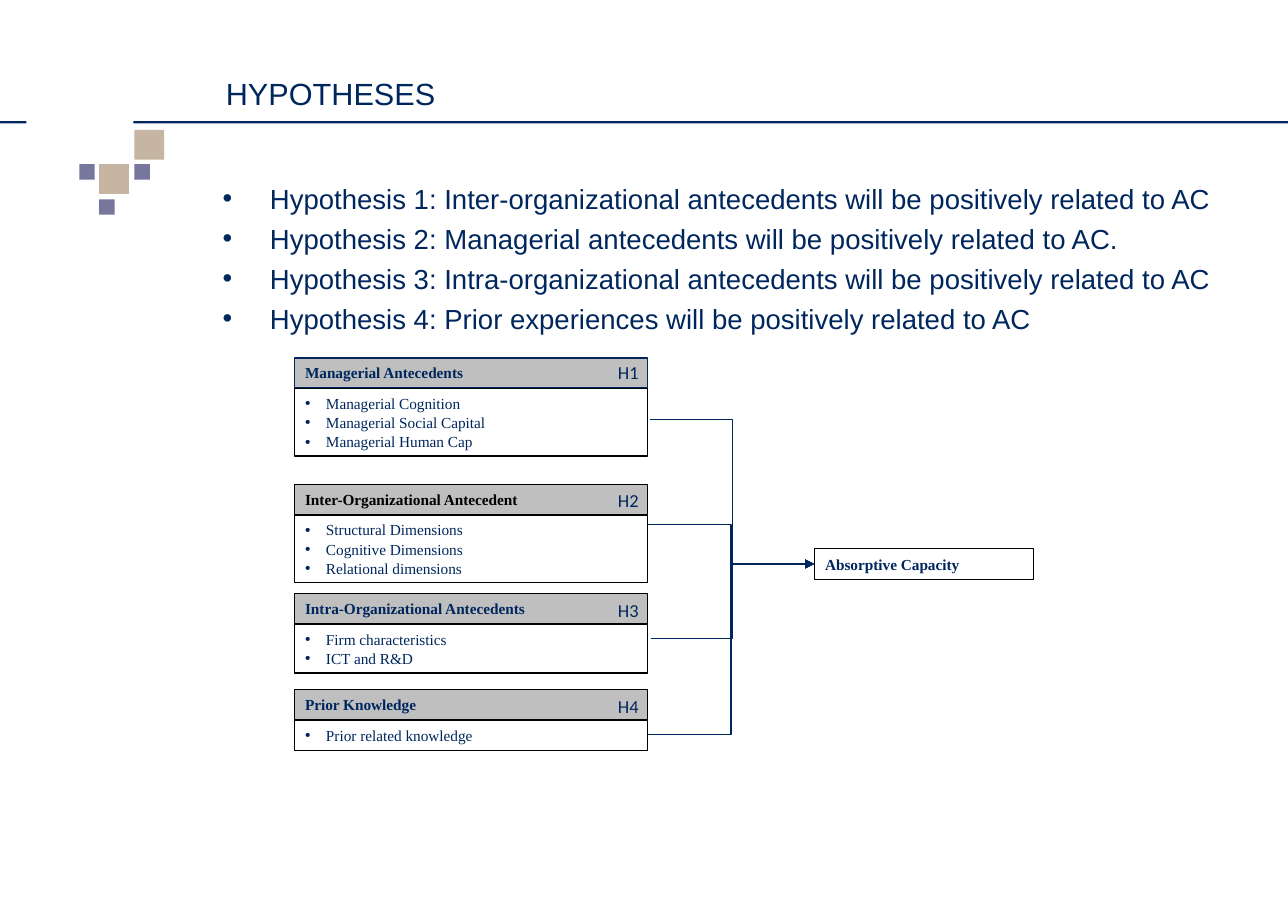
from lxml.etree import SubElement
from pptx import Presentation
from pptx.dml.color import RGBColor
from pptx.enum.shapes import MSO_CONNECTOR, MSO_SHAPE
from pptx.enum.text import MSO_ANCHOR, MSO_AUTO_SIZE, PP_ALIGN
from pptx.oxml.ns import qn
from pptx.util import Inches, Pt

COLORS = {
    "navy": "00275D",
    "black": "000000",
    "gray": "BFBFBF",
    "violet": "77769D",
    "sand": "C5B5A2",
}

HYPOTHESES = [
    "Hypothesis 1: Inter-organizational antecedents will be positively related to AC",
    "Hypothesis 2: Managerial antecedents will be positively related to AC.",
    "Hypothesis 3: Intra-organizational antecedents will be positively related to AC",
    "Hypothesis 4: Prior experiences will be positively related to AC",
]

ANTECEDENTS = [
    dict(top=3.25, heading="Managerial Antecedents", label="H1", label_drop=-0.02,
         border="navy", start=(5.9, 3.81),
         items=["Managerial Cognition", "Managerial Social Capital", "Managerial Human Cap"]),
    dict(top=4.4, heading="Inter-Organizational Antecedent", label="H2", label_drop=-0.01,
         heading_color="black", start=(5.88, 4.76),
         items=["Structural Dimensions", "Cognitive Dimensions", "Relational dimensions"]),
    dict(top=5.39, heading="Intra-Organizational Antecedents", label="H3",
         start=(5.91, 5.8), items=["Firm characteristics", "ICT and R&D"]),
    dict(top=6.26, heading="Prior Knowledge", label="H4",
         start=(5.88, 6.67), items=["Prior related knowledge"]),
]


def rgb(name):
    return RGBColor.from_string(COLORS[name])


def write(frame, lines, size=10, font="Times New Roman", color="navy", bold=False,
          anchor=MSO_ANCHOR.MIDDLE, margins=(0.1, 0.05), indent=0, gap=0):
    frame.word_wrap = True
    frame.auto_size = MSO_AUTO_SIZE.NONE
    frame.vertical_anchor = anchor
    frame.margin_left = frame.margin_right = Inches(margins[0])
    frame.margin_top = frame.margin_bottom = Inches(margins[1])
    for number, line in enumerate(lines):
        paragraph = frame.add_paragraph() if number else frame.paragraphs[0]
        paragraph.alignment = PP_ALIGN.LEFT
        if indent:
            properties = paragraph._p.get_or_add_pPr()
            properties.set("marL", str(Inches(indent)))
            properties.set("indent", str(-Inches(indent)))
            SubElement(properties, qn("a:buFont"), typeface="Arial")
            SubElement(properties, qn("a:buChar"), char="•")
        paragraph.space_before = Pt(gap if number else 0)
        run = paragraph.add_run()
        run.text = line
        run.font.size = Pt(size)
        run.font.name = font
        run.font.bold = bold
        run.font.color.rgb = rgb(color)


def add_box(slide, left, top, width, height, fill=None, border=None):
    box = slide.shapes.add_shape(MSO_SHAPE.RECTANGLE, Inches(left), Inches(top),
                                 Inches(width), Inches(height))
    box.shadow.inherit = False
    if fill:
        box.fill.solid()
        box.fill.fore_color.rgb = rgb(fill)
    else:
        box.fill.background()
    if border:
        box.line.color.rgb = rgb(border)
        box.line.width = Pt(0.75)
    else:
        box.line.fill.background()
    return box


def place(shape, left, top, width, height):
    shape.left, shape.top = Inches(left), Inches(top)
    shape.width, shape.height = Inches(width), Inches(height)


def add_decoration(slide, left, top):
    small, large = 0.14, 0.27
    for dx, dy, side, color in [
        (0, 0.31, small, "violet"),
        (0.5, 0, large, "sand"),
        (0.18, 0.31, large, "sand"),
        (0.18, 0.63, small, "violet"),
        (0.5, 0.31, small, "violet"),
    ]:
        add_box(slide, left + dx, top + dy, side, side, color)


def add_rule(slide, top, slide_width):
    gap_start, gap_end = 0.24, 1.21
    add_box(slide, 0, top, gap_start, 0.02, "navy")
    add_box(slide, gap_end, top, slide_width - gap_end, 0.02, "navy")


def add_title(slide, left, top, width, height):
    title = slide.shapes.title
    place(title, left, top, width, height)
    write(title.text_frame, ["HYPOTHESES"], size=20, font="Arial",
          anchor=MSO_ANCHOR.BOTTOM, margins=(0, 0))


def add_hypotheses(slide, left, top, width, height):
    body = slide.placeholders[1]
    place(body, left, top, width, height)
    write(body.text_frame, HYPOTHESES, size=18, font="Arial", anchor=MSO_ANCHOR.TOP,
          margins=(0, 0), indent=0.43, gap=4.5)


def add_antecedent(slide, left, top, width, heading, items, label, label_drop=0,
                   heading_color="navy", border="black"):
    header = add_box(slide, left, top, width, 0.27, "gray", border)
    write(header.text_frame, [heading], bold=True, color=heading_color)
    panel = add_box(slide, left, top + 0.28, width, 0.1 + 0.17 * len(items), border="black")
    write(panel.text_frame, items, indent=0.19, gap=0.6)
    tag = slide.shapes.add_textbox(Inches(left + width - 0.37), Inches(top + label_drop),
                                   Inches(0.74), Inches(0.3))
    write(tag.text_frame, [label], size=12, font="Calibri", anchor=MSO_ANCHOR.TOP)


def add_arrow(slide, start, end):
    arrow = slide.shapes.add_connector(MSO_CONNECTOR.ELBOW, *map(Inches, start + end))
    arrow.line.color.rgb = rgb("navy")
    arrow.line.width = Pt(0.75)
    SubElement(arrow.line._get_or_add_ln(), qn("a:tailEnd"), type="triangle")
    SubElement(arrow._element.spPr, qn("a:effectLst"))


def add_model(slide, left, width, outcome_left, outcome_top):
    outcome = add_box(slide, outcome_left, outcome_top, 1.99, 0.28, border="black")
    write(outcome.text_frame, ["Absorptive Capacity"], bold=True)
    for antecedent in ANTECEDENTS:
        details = {key: value for key, value in antecedent.items() if key != "start"}
        add_antecedent(slide, left, width=width, **details)
        add_arrow(slide, antecedent["start"], (outcome_left, outcome_top + 0.14))


def main():
    presentation = Presentation()
    presentation.slide_width = Inches(11.69)
    presentation.slide_height = Inches(8.27)
    slide = presentation.slides.add_slide(presentation.slide_layouts[1])
    add_decoration(slide, 0.72, 1.18)
    add_rule(slide, 1.1, 11.69)
    add_title(slide, 2.05, 0.31, 9.11, 0.7)
    add_hypotheses(slide, 2.02, 1.65, 9.42, 5.45)
    add_model(slide, 2.67, 3.21, 7.39, 4.98)
    presentation.save("out.pptx")


if __name__ == "__main__":
    main()
